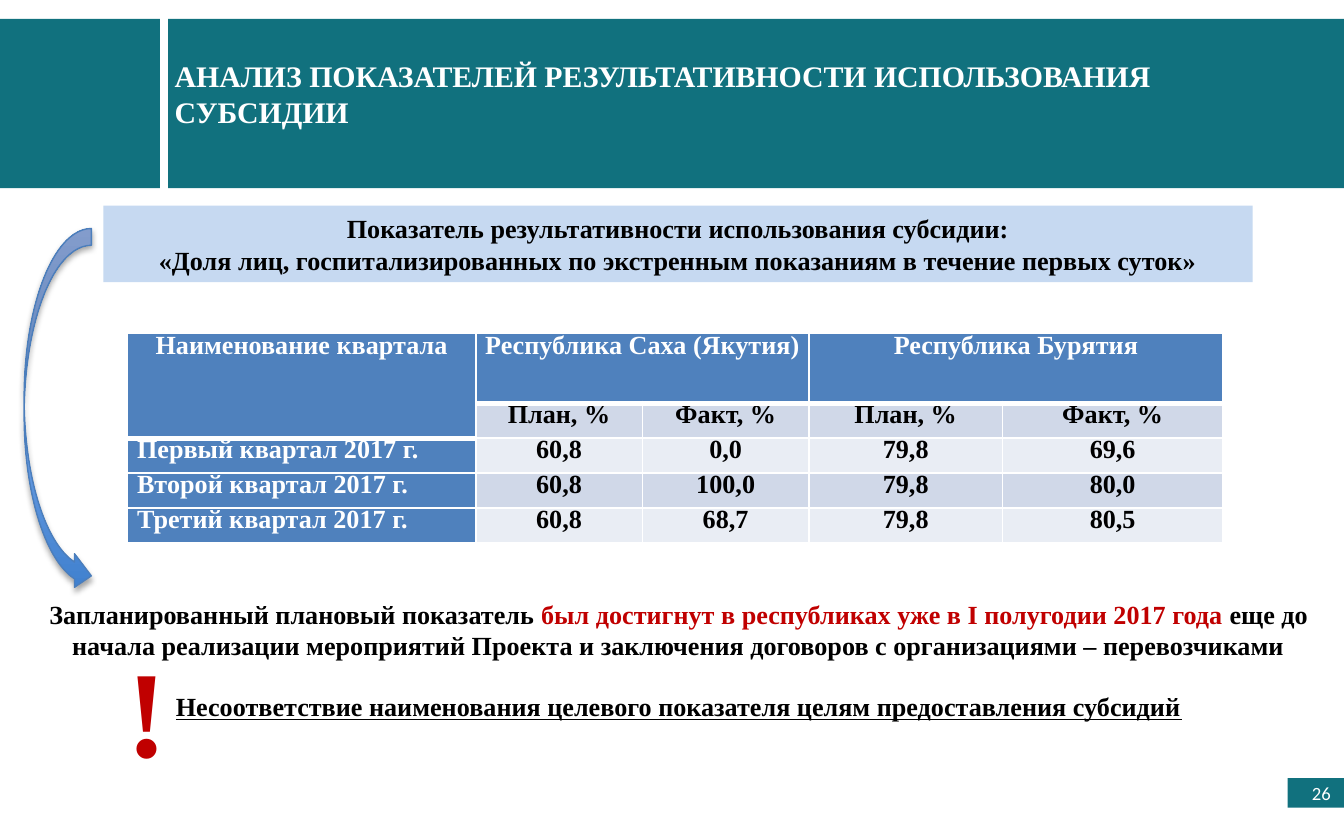
from lxml.etree import SubElement
from pptx import Presentation
from pptx.dml.color import RGBColor
from pptx.enum.shapes import MSO_SHAPE
from pptx.enum.text import MSO_ANCHOR, PP_ALIGN
from pptx.oxml import parse_xml
from pptx.oxml.ns import nsdecls, qn
from pptx.util import Emu, Pt

EMU_PER_PX = 9144  # 100 px to the inch
TEAL, BLUE, PALE_BLUE = "11717E", "4F81BD", "C6D9F1"
BANDS = ("D0D8E8", "E9EDF4")
WHITE, BLACK, RED = "FFFFFF", "000000", "C00000"

COLUMN_WIDTHS = (259, 124, 124, 144, 164)
ROW_HEIGHTS = (52, 26, 26, 26, 26)
QUARTERS = (
    ("Наименование квартала", "Республика Саха (Якутия)", "", "Республика Бурятия", ""),
    ("", "План, %", "Факт, %", "План, %", "Факт, %"),
    ("Первый квартал 2017 г.", "60,8", "0,0", "79,8", "69,6"),
    ("Второй квартал 2017 г.", "60,8", "100,0", "79,8", "80,0"),
    ("Третий квартал 2017 г.", "60,8", "68,7", "79,8", "80,5"),
)
MERGES = (((0, 0), (1, 0)), ((0, 1), (0, 2)), ((0, 3), (0, 4)))


def px(length):
    return Emu(length * EMU_PER_PX)


def color(value):
    return RGBColor.from_string(value)


def is_header(row, column):
    return row == 0 or (row == 1 and column == 0)


class SlideBuilder:
    """Holds the text style and the slide being filled."""

    font_name = "Times New Roman"
    font_size = 14

    def __init__(self, presentation):
        self.slide = presentation.slides.add_slide(presentation.slide_layouts[5])

    def style(self, font, value=BLACK, size=None, bold=True, name=None):
        font.name = name or self.font_name
        font.size = Pt(size or self.font_size)
        font.bold = bold
        font.color.rgb = color(value)

    def set_text(self, text_frame, paragraphs, align=PP_ALIGN.CENTER, gap=0, **style):
        """Fill a frame; each paragraph is a list of (text, color) runs."""
        for index, runs in enumerate(paragraphs):
            paragraph = text_frame.paragraphs[0] if index == 0 else text_frame.add_paragraph()
            paragraph.alignment = align
            if index and gap:
                paragraph.space_before = Pt(gap)
            for text, value in runs:
                run = paragraph.add_run()
                run.text = text
                self.style(run.font, value, **style)

    def title(self, text, left, top, width, height):
        title = self.slide.shapes.title
        title.left, title.top, title.width, title.height = map(px, (left, top, width, height))
        title.text_frame.vertical_anchor = MSO_ANCHOR.TOP
        self.set_text(title.text_frame, [[(text, WHITE)]], PP_ALIGN.LEFT, size=16)
        # Bring the title in front of the bands
        self.slide.shapes._spTree.append(title._element)

    def rectangle(self, left, top, width, height, fill):
        shape = self.slide.shapes.add_shape(
            MSO_SHAPE.RECTANGLE, *map(px, (left, top, width, height)))
        shape.shadow.inherit = False
        shape.fill.solid()
        shape.fill.fore_color.rgb = color(fill)
        shape.line.fill.background()
        shape.text_frame.vertical_anchor = MSO_ANCHOR.MIDDLE
        return shape

    def text_box(self, left, top, width, height, paragraphs, wrap=True, **style):
        text_box = self.slide.shapes.add_textbox(*map(px, (left, top, width, height)))
        text_box.text_frame.word_wrap = wrap
        self.set_text(text_box.text_frame, paragraphs, **style)
        return text_box

    def curved_arrow(self, left, top, width, height):
        arrow = self.slide.shapes.add_shape(
            MSO_SHAPE.CURVED_RIGHT_ARROW, *map(px, (left, top, width, height)))
        arrow.fill.gradient()
        arrow.fill.gradient_angle = 90
        for stop, position, value in zip(arrow.fill.gradient_stops, (0, 1), ("3F80CE", "A4C4FF")):
            stop.position = position
            stop.color.rgb = color(value)
        arrow.line.color.rgb = color("4B7EBC")
        arrow.line.width = Pt(0.75)
        arrow._element.spPr.append(parse_xml(
            f'<a:effectLst {nsdecls("a")}>'
            f'<a:outerShdw blurRad="{Pt(3.1)}" dist="{Pt(1.8)}" dir="5400000" rotWithShape="0">'
            '<a:srgbClr val="000000"><a:alpha val="35000"/></a:srgbClr>'
            '</a:outerShdw></a:effectLst>'))

    def borders(self, cell, top, bottom):
        """Draw white cell edges, with top and bottom widths in points."""
        properties = cell._tc.get_or_add_tcPr()
        for side, width in (("L", 1), ("R", 1), ("T", top), ("B", bottom)):
            line = SubElement(properties, qn(f"a:ln{side}"), w=str(Pt(width)))
            fill = SubElement(line, qn("a:solidFill"))
            SubElement(fill, qn("a:srgbClr"), val=WHITE)

    def table(self, left, top, rows, widths, heights, merges):
        frame = self.slide.shapes.add_table(
            len(rows), len(widths), *map(px, (left, top, sum(widths), sum(heights))))
        table = frame.table
        for column, width in zip(table.columns, widths):
            column.width = px(width)
        for row, height in zip(table.rows, heights):
            row.height = px(height)
        for first, last in merges:
            table.cell(*first).merge(table.cell(*last))
        for row_index, row in enumerate(rows):
            for column_index, text in enumerate(row):
                self.cell(table.cell(row_index, column_index), text, row_index, column_index)

    def cell(self, cell, text, row, column):
        header = is_header(row, column)
        blue = header or column == 0
        below_header = row > 0 and is_header(row - 1, column)
        self.borders(cell, 3 if below_header else 1, 3 if header else 1)
        cell.fill.solid()
        cell.fill.fore_color.rgb = color(BLUE if blue else BANDS[(row - 1) % 2])
        cell.margin_left = cell.margin_right = px(7)
        cell.margin_top = cell.margin_bottom = 0
        paragraph = cell.text_frame.paragraphs[0]
        paragraph.line_spacing = 0.9
        if text:
            align = PP_ALIGN.LEFT if column == 0 and not header else PP_ALIGN.CENTER
            self.set_text(cell.text_frame, [[(text, WHITE if blue else BLACK)]], align)


def main():
    presentation = Presentation()
    presentation.slide_width, presentation.slide_height = px(1000), px(625)
    builder = SlideBuilder(presentation)

    builder.rectangle(125, 14, 875, 126, TEAL)
    builder.rectangle(0, 14, 119, 126, TEAL)
    page_number = builder.rectangle(958, 579, 42, 22, TEAL)
    builder.set_text(page_number.text_frame, [[("26", WHITE)]], PP_ALIGN.RIGHT,
                     size=10, bold=False, name="Calibri")
    builder.title("АНАЛИЗ ПОКАЗАТЕЛЕЙ РЕЗУЛЬТАТИВНОСТИ ИСПОЛЬЗОВАНИЯ СУБСИДИИ", 120, 38, 770, 64)

    indicator = builder.rectangle(77, 153, 855, 57, PALE_BLUE)
    builder.set_text(indicator.text_frame, [
        [("Показатель результативности использования субсидии:", BLACK)],
        [("«Доля лиц, госпитализированных по экстренным показаниям в течение первых суток»", BLACK)],
    ])

    conclusion = builder.text_box(21, 440, 968, 104, [
        [("Запланированный плановый показатель ", BLACK),
         ("был достигнут в республиках уже в I полугодии 2017 года", RED),
         (" еще до начала реализации мероприятий Проекта и заключения договоров "
          "с организациями – перевозчиками", BLACK)],
        [("Несоответствие наименования целевого показателя целям предоставления субсидий", BLACK)],
    ], gap=16)
    conclusion.text_frame.paragraphs[1].runs[0].font.underline = True

    builder.curved_arrow(18, 170, 50, 271)
    builder.table(95, 248, QUARTERS, COLUMN_WIDTHS, ROW_HEIGHTS, MERGES)
    builder.text_box(84, 467, 51, 121, [[("!", RED)]], wrap=False, align=PP_ALIGN.LEFT, size=66)

    presentation.save("out.pptx")


if __name__ == "__main__":
    main()
